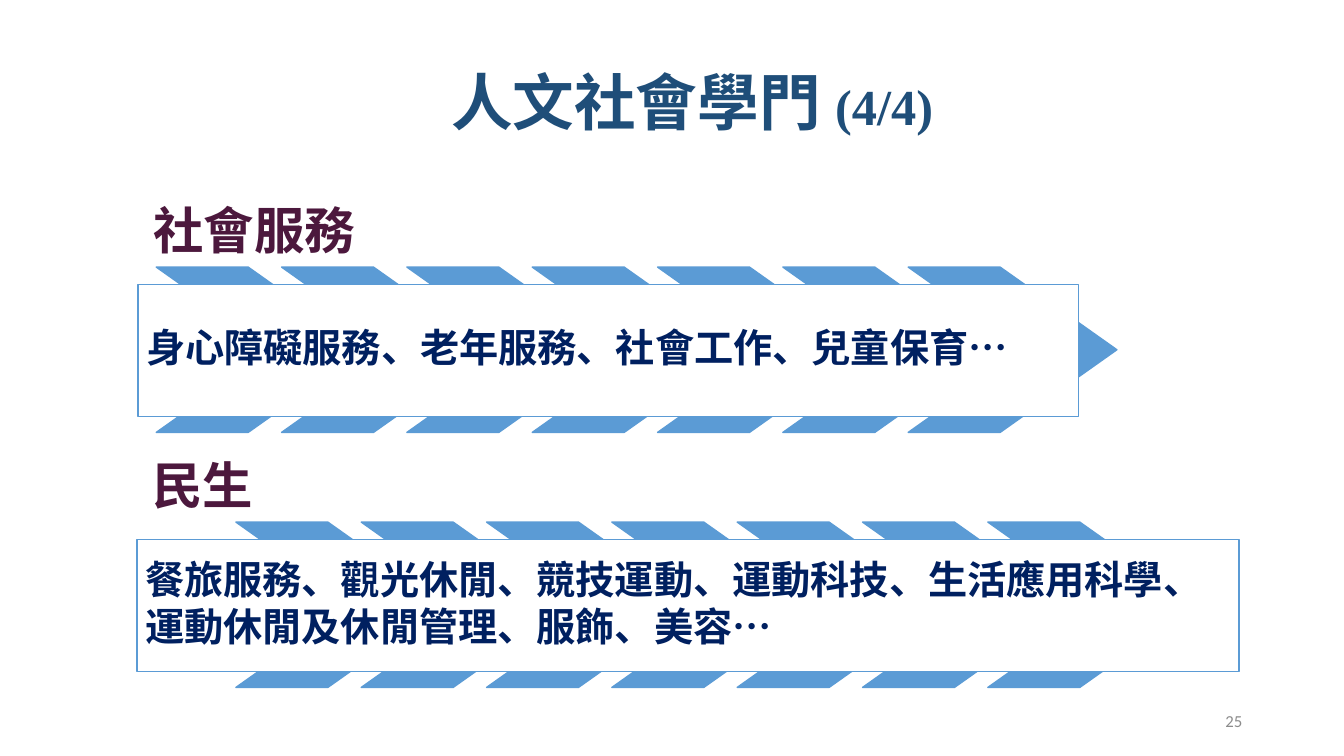
from pptx import Presentation
from pptx.dml.color import RGBColor
from pptx.enum.shapes import MSO_SHAPE
from pptx.enum.text import MSO_ANCHOR, PP_ALIGN
from pptx.oxml.ns import qn
from pptx.util import Inches, Pt

CHEVRON, RECTANGLE = MSO_SHAPE.CHEVRON, MSO_SHAPE.RECTANGLE
MIDDLE, BOTTOM = MSO_ANCHOR.MIDDLE, MSO_ANCHOR.BOTTOM
LEFT, CENTER, RIGHT = PP_ALIGN.LEFT, PP_ALIGN.CENTER, PP_ALIGN.RIGHT

CJK, SERIF, SANS = "Noto Sans CJK SC", "Times New Roman", "Calibri"
BLUE, WHITE, NAVY = "5B9BD5", "FFFFFF", "002060"
PLUM, TITLE_BLUE, GREY = "4C183D", "1F4E79", "8C8C8C"

CHEVRON_COUNT, CHEVRON_STEP = 7, 1.243
CHEVRON_WIDTH, CHEVRON_HEIGHT = 2.07, 1.64


def rgb(hex_color):
    return RGBColor.from_string(hex_color)


def add_run(paragraph, text, size, font, color, bold):
    run = paragraph.add_run()
    run.text = text
    run.font.size = Pt(size)
    run.font.name = font
    run.font.bold = bold
    run.font.color.rgb = rgb(color)
    east_asian = run.font._element.makeelement(qn("a:ea"), {"typeface": font})
    run.font._element.find(qn("a:latin")).addnext(east_asian)


def write(shape, paragraphs, size=28, font=CJK, color=NAVY, bold=True,
          align=LEFT, anchor=MIDDLE, inset=None, line_spacing=0.9, after=0):
    """Fill a shape with paragraphs, each a list of (text, overrides) runs."""
    frame = shape.text_frame
    frame.word_wrap = True
    frame.vertical_anchor = anchor
    if inset is not None:
        frame.margin_left = frame.margin_right = Inches(inset)
        frame.margin_top = frame.margin_bottom = Inches(inset)
    for index, runs in enumerate(paragraphs):
        paragraph = frame.add_paragraph() if index else frame.paragraphs[0]
        paragraph.alignment = align
        paragraph.line_spacing = line_spacing
        paragraph.space_after = Pt(after)
        for text, overrides in runs:
            style = dict(size=size, font=font, color=color, bold=bold)
            add_run(paragraph, text, **{**style, **overrides})


def add_textbox(slide, left, top, width, height):
    return slide.shapes.add_textbox(
        Inches(left), Inches(top), Inches(width), Inches(height))


def add_box(slide, kind, left, top, width, height, fill):
    box = slide.shapes.add_shape(
        kind, Inches(left), Inches(top), Inches(width), Inches(height))
    box.shadow.inherit = False
    box.fill.solid()
    box.fill.fore_color.rgb = rgb(fill)
    box.line.color.rgb = rgb(BLUE)
    box.line.width = Pt(1)
    return box


def add_title(slide, left, top, width, height):
    title = add_textbox(slide, left, top, width, height)
    write(title, [[("人文社會學門 ", {}), ("(4/4)", dict(size=36, font=SERIF))]],
          size=44, color=TITLE_BLUE, align=CENTER)


def add_field_panel(slide, left, top, width, heading, lines, chevron_offset):
    """Heading above a bordered list that lies over a row of chevrons."""
    heading_box = add_textbox(slide, left, top, 8.84, 0.8)
    write(heading_box, [[(heading, {})]], size=36, color=PLUM,
          anchor=BOTTOM, inset=0.15)
    for index in range(CHEVRON_COUNT):
        chevron = add_box(
            slide, CHEVRON, left + chevron_offset + index * CHEVRON_STEP,
            top + 0.72, CHEVRON_WIDTH, CHEVRON_HEIGHT, BLUE)
        chevron.adjustments[0] = 0.706
    programs = add_box(slide, RECTANGLE, left, top + 0.89, width, 1.31, WHITE)
    write(programs, [[(line, {})] for line in lines], inset=0.08, after=4)


def add_page_number(slide, left, top, width, height):
    number = add_textbox(slide, left, top, width, height)
    write(number, [[("25", {})]], size=12, font=SANS, color=GREY,
          bold=False, align=RIGHT, line_spacing=1)


def main():
    deck = Presentation()
    deck.slide_width, deck.slide_height = Inches(13.33), Inches(7.5)
    slide = deck.slides.add_slide(deck.slide_layouts[6])
    add_field_panel(slide, 1.37, 1.93, 9.33, "社會服務",
                    ["身心障礙服務、老年服務、社會工作、兒童保育…"],
                    chevron_offset=0.18)
    add_field_panel(slide, 1.36, 4.46, 10.93, "民生",
                    ["餐旅服務、觀光休閒、競技運動、運動科技、生活應用科學、",
                     "運動休閒及休閒管理、服飾、美容…"],
                    chevron_offset=0.98)
    add_title(slide, 1, 0.44, 11.73, 1.22)
    add_page_number(slide, 9.42, 6.95, 3, 0.4)
    deck.save("out.pptx")


if __name__ == "__main__":
    main()
